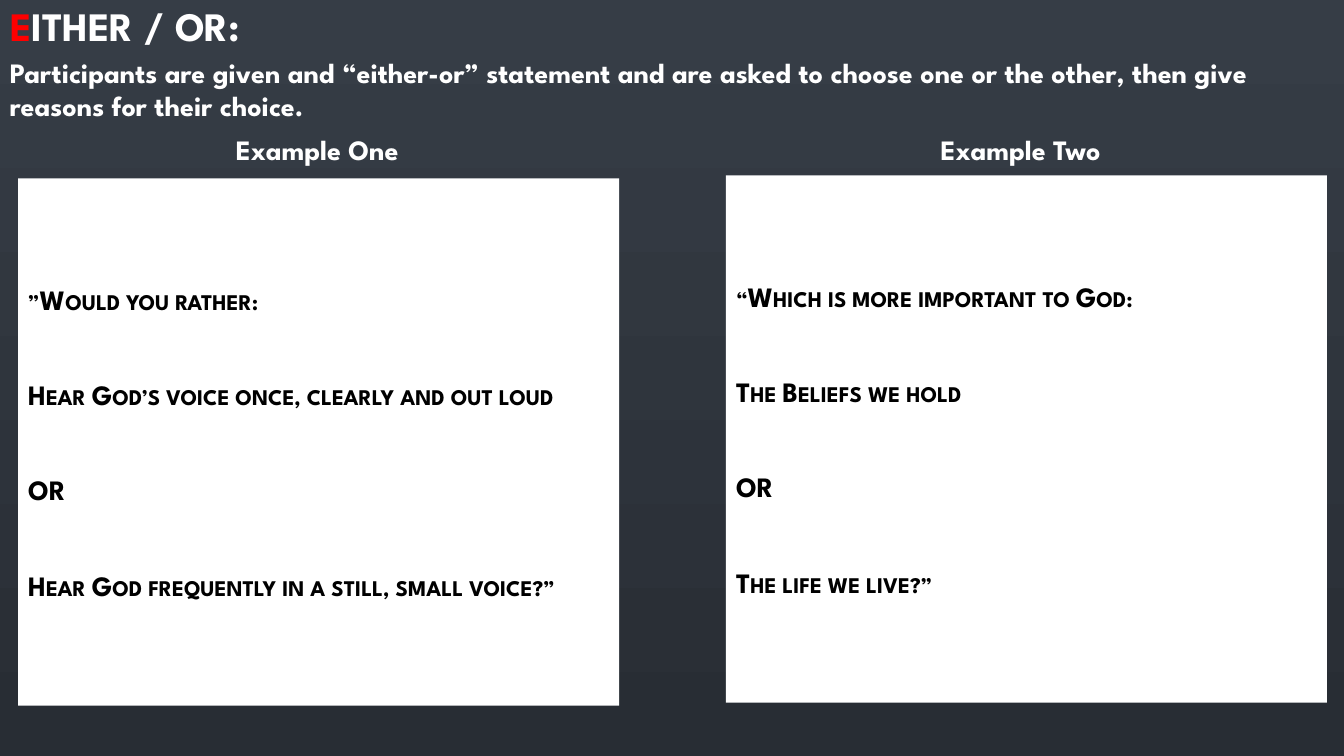
from lxml.etree import SubElement
from pptx import Presentation
from pptx.dml.color import RGBColor
from pptx.enum.text import MSO_ANCHOR, MSO_AUTO_SIZE, PP_ALIGN
from pptx.oxml.ns import qn
from pptx.util import Inches, Pt

FONT = "League Spartan"
WHITE, BLACK, RED = "FFFFFF", "000000", "FF0000"
BACKGROUND = ("363D46", "282D34")

TITLE_BOX = (0, 0, 6.58, 0.5)
INSTRUCTION_BOX = (0, 0.5, 13.33, 0.77)
INSTRUCTION = (
    "Participants are given and “either-or” statement and are asked to choose "
    "one or the other, then give reasons for their choice."
)
CARD_WIDTH, CARD_HEIGHT = 5.96, 5.23
HEADING_TOP, HEADING_HEIGHT = 1.27, 0.44
CHOICE_GAP = 44

# Heading, heading left, heading width, card left, card top, card lines
EXAMPLES = [
    ("Example One", 2.24, 2.05, 0.18, 1.77,
     ["”Would you rather:", "Hear God’s voice once, clearly and out loud",
      "OR", "Hear God frequently in a still, small voice?”"]),
    ("Example Two", 9.23, 1.98, 7.2, 1.74,
     ["“Which is more important to God:", "The Beliefs we hold",
      "OR", "The life we live?”"]),
]


def color(hex_string):
    return RGBColor.from_string(hex_string)


def place(shape, box):
    shape.left, shape.top, shape.width, shape.height = map(Inches, box)


def format_paragraph(paragraph, size, hex_string):
    paragraph.alignment = PP_ALIGN.LEFT
    paragraph.space_before = Pt(0)
    font = paragraph.font
    font.name, font.size, font.bold = FONT, Pt(size), True
    font.color.rgb = color(hex_string)


def paint_background(slide):
    fill = slide.background.fill
    fill.gradient()
    fill.gradient_angle = 270
    for stop, hex_string in zip(fill.gradient_stops, BACKGROUND):
        stop.color.rgb = color(hex_string)


def add_title(slide, box):
    title = slide.shapes.title
    place(title, box)
    frame = title.text_frame
    frame.auto_size = MSO_AUTO_SIZE.NONE
    frame.vertical_anchor = MSO_ANCHOR.MIDDLE
    paragraph = frame.paragraphs[0]
    format_paragraph(paragraph, 28.8, WHITE)
    initial = paragraph.add_run()
    initial.text = "E"
    initial.font.color.rgb = color(RED)
    paragraph.add_run().text = "ITHER / OR:"


def add_label(slide, box, text):
    label = slide.shapes.add_textbox(*map(Inches, box))
    frame = label.text_frame
    frame.word_wrap = True
    frame.text = text
    format_paragraph(frame.paragraphs[0], 20, WHITE)


def fill_card(card, box, lines):
    """Turn a body placeholder into a white card with small-caps lines."""
    place(card, box)
    card.fill.solid()
    card.fill.fore_color.rgb = color(WHITE)
    frame = card.text_frame
    frame.auto_size = MSO_AUTO_SIZE.NONE
    frame.vertical_anchor = MSO_ANCHOR.MIDDLE
    frame.text = "\n".join(lines)
    for index, paragraph in enumerate(frame.paragraphs):
        properties = paragraph._p.get_or_add_pPr()
        properties.set("marL", "0")
        properties.set("indent", "0")
        SubElement(properties, qn("a:buNone"))
        format_paragraph(paragraph, 20, BLACK)
        properties.get_or_add_defRPr().set("cap", "small")
        if index:
            paragraph.space_before = Pt(CHOICE_GAP)


def add_example(slide, card, example):
    heading, heading_left, heading_width, left, top, lines = example
    fill_card(card, (left, top, CARD_WIDTH, CARD_HEIGHT), lines)
    add_label(slide, (heading_left, HEADING_TOP, heading_width, HEADING_HEIGHT), heading)


def main():
    presentation = Presentation()
    presentation.slide_width = Inches(13.33)
    presentation.slide_height = Inches(7.5)
    two_content = presentation.slide_layouts.get_by_name("Two Content")
    slide = presentation.slides.add_slide(two_content)
    paint_background(slide)
    add_title(slide, TITLE_BOX)
    add_label(slide, INSTRUCTION_BOX, INSTRUCTION)
    cards = [slide.placeholders[1], slide.placeholders[2]]
    for card, example in zip(cards, EXAMPLES):
        add_example(slide, card, example)
    presentation.save("out.pptx")


if __name__ == "__main__":
    main()
